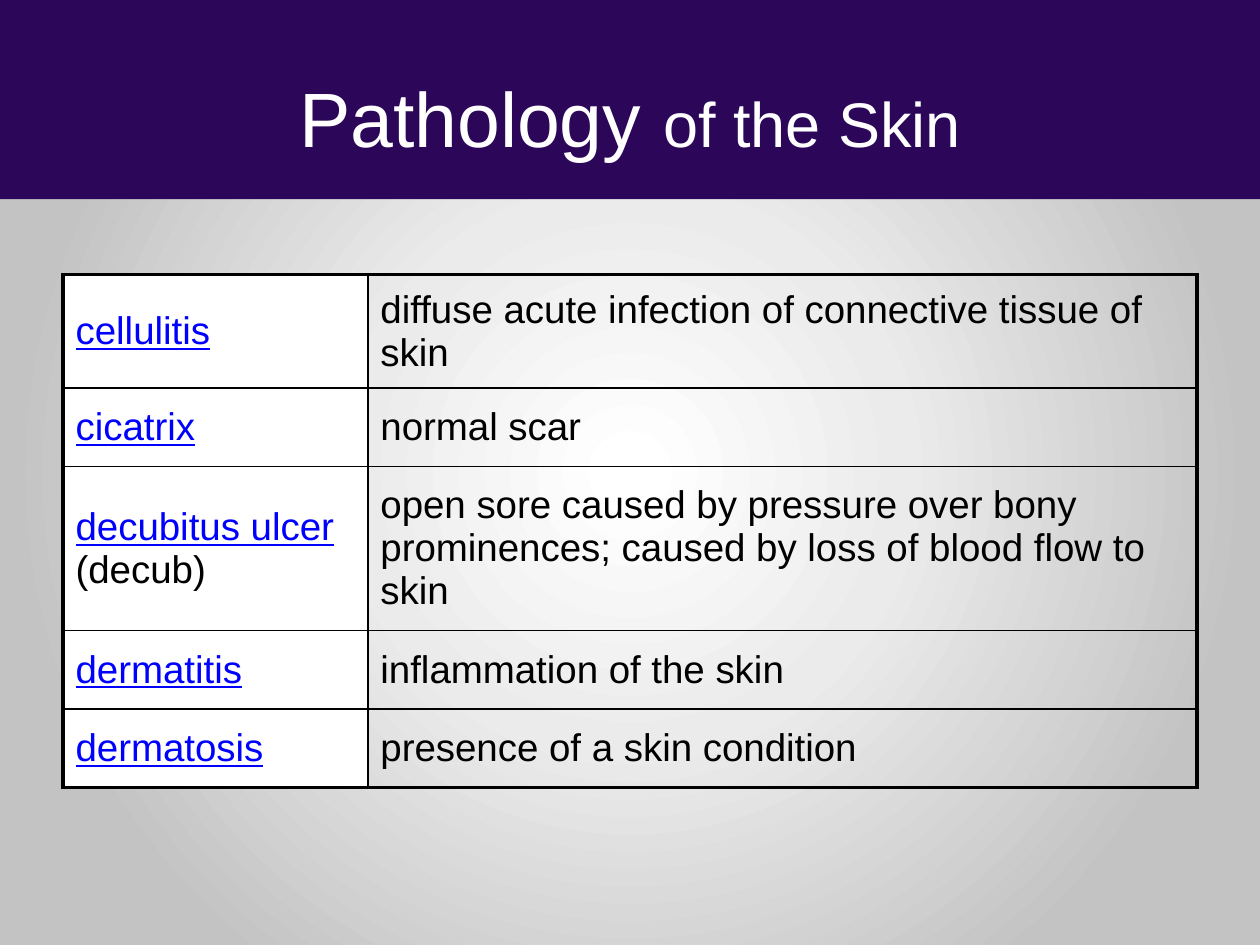
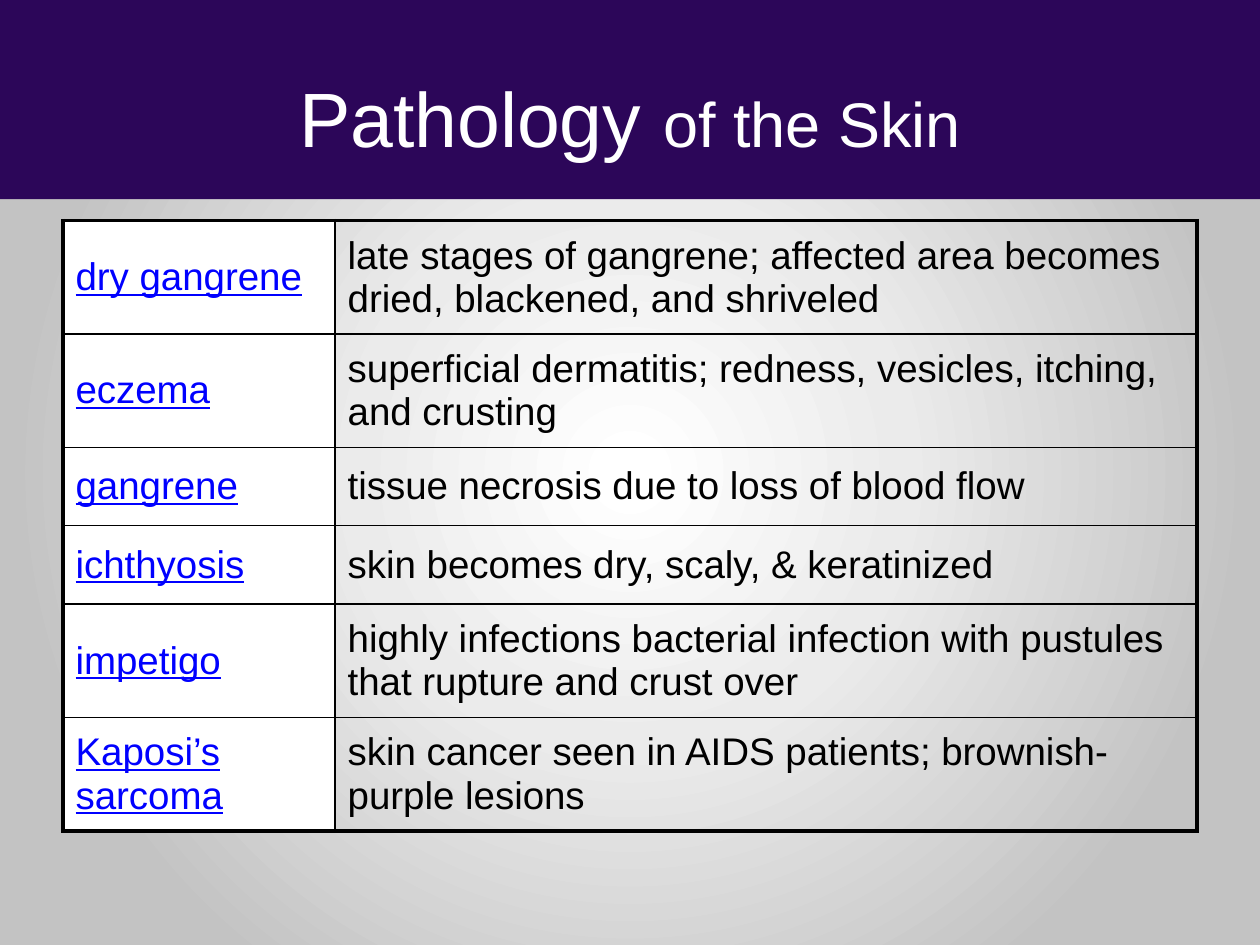
"""Build two slides of skin pathology terms, each with a title band and a table."""
from lxml.etree import SubElement
from pptx import Presentation
from pptx.dml.color import RGBColor
from pptx.enum.shapes import MSO_SHAPE as Shape
from pptx.enum.text import MSO_ANCHOR as Anchor, PP_ALIGN as Align
from pptx.oxml import parse_xml
from pptx.oxml.ns import nsdecls, qn
from pptx.util import Pt

PURPLE = RGBColor(0x2C, 0x06, 0x59)
WHITE = RGBColor(0xFF, 0xFF, 0xFF)
BLUE = RGBColor(0x00, 0x00, 0xFF)
BLACK = RGBColor(0x00, 0x00, 0x00)
LIGHT = RGBColor(0xEB, 0xEB, 0xEB)
GRAY = RGBColor(0xC3, 0xC3, 0xC3)

FONT = "Arial"
WIDTH = 648
LEFT = 36
THICK, THIN = 2.25, 1
HEIGHTS = {1: 44.8, 2: 64.8, 3: 93.7}
STOPS = [(2, WHITE), (35, LIGHT), (79, GRAY)]
TITLE = [("Pathology ", 44), ("of the Skin", 36)]

PAGES = [
    (157, 174.2, [
        ("cellulitis", "", "diffuse acute infection of connective tissue of skin", 2),
        ("cicatrix", "", "normal scar", 1),
        ("decubitus ulcer", " (decub)", "open sore caused by pressure over bony "
         "prominences; caused by loss of blood flow to skin", 3),
        ("dermatitis", "", "inflammation of the skin", 1),
        ("dermatosis", "", "presence of a skin condition", 1),
    ]),
    (126, 155.5, [
        ("dry gangrene", "", "late stages of gangrene; affected area becomes "
         "dried, blackened, and shriveled", 2),
        ("eczema", "", "superficial dermatitis; redness, vesicles, itching, and crusting", 2),
        ("gangrene", "", "tissue necrosis due to loss of blood flow", 1),
        ("ichthyosis", "", "skin becomes dry, scaly, & keratinized", 1),
        ("impetigo", "", "highly infections bacterial infection with pustules "
         "that rupture and crust over", 2),
        ("Kaposi’s sarcoma", "", "skin cancer seen in AIDS patients; brownish-purple lesions", 2),
    ]),
]


def add_backdrop(slide):
    stops = "".join(f'<a:gs pos="{pos * 1000}"><a:srgbClr val="{tone}"/></a:gs>'
                    for pos, tone in STOPS)
    slide.element.cSld.insert(0, parse_xml(
        f'<p:bg {nsdecls("p", "a")}><p:bgPr><a:gradFill rotWithShape="1">'
        f'<a:gsLst>{stops}</a:gsLst><a:path path="circle">'
        '<a:fillToRect l="50000" t="50000" r="50000" b="50000"/></a:path>'
        '</a:gradFill><a:effectLst/></p:bgPr></p:bg>'))


def add_edges(cell, edges):
    props = cell._tc.get_or_add_tcPr()
    for side, width in edges.items():
        line = SubElement(props, qn("a:ln" + side), w=str(Pt(width)))
        fill = SubElement(line, qn("a:solidFill"))
        SubElement(fill, qn("a:srgbClr"), val=str(BLACK))


prs = Presentation()
prs.slide_width, prs.slide_height = Pt(720), Pt(540)

for top, first, rows in PAGES:
    slide = prs.slides.add_slide(prs.slide_layouts[6])
    add_backdrop(slide)

    band = slide.shapes.add_shape(Shape.RECTANGLE, 0, 0, prs.slide_width, Pt(113.8))
    band.shadow.inherit = False
    band.fill.solid()
    band.fill.fore_color.rgb = PURPLE
    band.line.fill.background()

    title = slide.shapes.add_textbox(Pt(LEFT), Pt(21.6), Pt(WIDTH), Pt(90)).text_frame
    title.word_wrap = True
    title.vertical_anchor = Anchor.MIDDLE
    para = title.paragraphs[0]
    para.alignment = Align.CENTER
    para.font.name = FONT
    para.font.color.rgb = WHITE
    for text, size in TITLE:
        run = para.add_run()
        run.text = text
        run.font.size = Pt(size)

    high = sum(HEIGHTS[row[-1]] for row in rows)
    table = slide.shapes.add_table(
        len(rows), 2, Pt(LEFT), Pt(top), Pt(WIDTH), Pt(high)).table
    table.first_row = table.horz_banding = False
    table.columns[0].width = Pt(first)
    table.columns[1].width = Pt(WIDTH - first)

    last = len(rows) - 1
    for i, (term, tail, text, lines) in enumerate(rows):
        table.rows[i].height = Pt(HEIGHTS[lines])
        for j, parts in enumerate([[(term, BLUE), (tail, BLACK)], [(text, BLACK)]]):
            cell = table.cell(i, j)
            cell.vertical_anchor = Anchor.MIDDLE
            add_edges(cell, {
                "L": THIN if j else THICK,
                "R": THICK if j else THIN,
                "T": THIN if i else THICK,
                "B": THICK if i == last else THIN,
            })
            if j:
                cell.fill.background()
            else:
                cell.fill.solid()
                cell.fill.fore_color.rgb = WHITE
            para = cell.text_frame.paragraphs[0]
            para.space_before = Pt(4.4)
            para.font.name = FONT
            para.font.size = Pt(22)
            for words, tone in parts:
                if words:
                    run = para.add_run()
                    run.text = words
                    run.font.color.rgb = tone
                    run.font.underline = tone == BLUE

prs.save("out.pptx")
